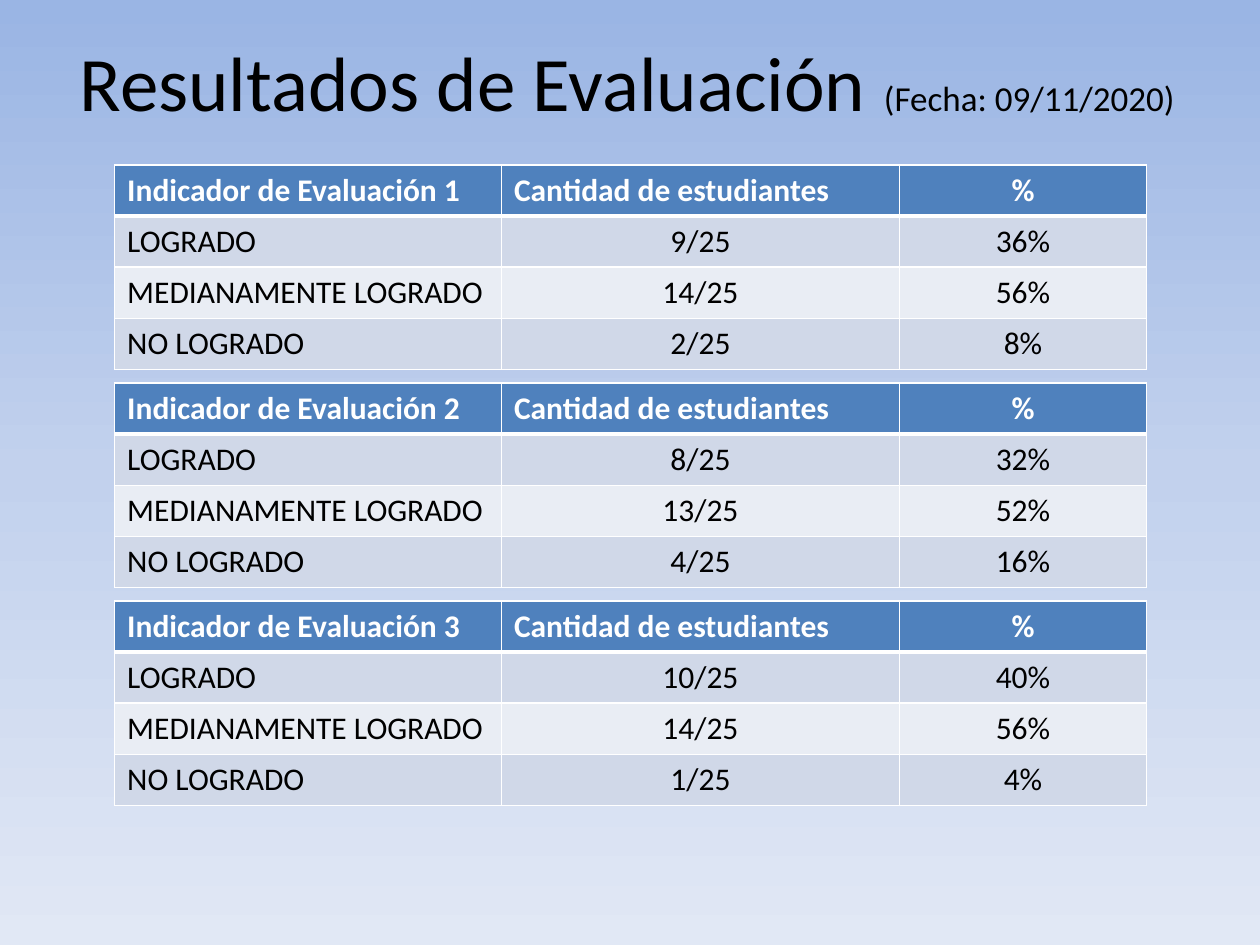
from lxml.etree import SubElement
from pptx import Presentation
from pptx.dml.color import RGBColor
from pptx.enum.text import MSO_ANCHOR, PP_ALIGN
from pptx.oxml.ns import qn
from pptx.util import Inches, Pt

COLORS = {
    "sky_top": "9AB5E4",
    "sky_middle": "C2D1ED",
    "sky_bottom": "E1E8F5",
    "header": "4F81BD",
    "band_dark": "D0D8E8",
    "band_light": "E9EDF4",
    "white": "FFFFFF",
    "black": "000000",
}
TITLE_FORMAT = {"name": "Calibri", "bold": False}
HEADER_FORMAT = {"name": "Calibri", "size": Pt(18), "bold": True}
BODY_FORMAT = {**HEADER_FORMAT, "bold": False}

LEVELS = ["LOGRADO", "MEDIANAMENTE LOGRADO", "NO LOGRADO"]
STUDENTS = 25
COUNTS_BY_INDICATOR = [[9, 14, 2], [8, 13, 4], [10, 14, 1]]
COLUMN_WIDTHS = [3.07, 3.16, 1.96]
TABLE_LEFT, TABLE_TOP, TABLE_PITCH = 0.91, 1.31, 1.73
TABLE_WIDTH, TABLE_HEIGHT = sum(COLUMN_WIDTHS), 1.62


def format_font(font, values, color):
    """Apply a dict of font values and a named colour."""
    for attribute, value in values.items():
        setattr(font, attribute, value)
    font.color.rgb = RGBColor.from_string(COLORS[color])


def paint_background(slide):
    """Fill the slide with a vertical three-stop gradient."""
    fill = slide.background.fill
    fill.gradient()
    fill.gradient_angle = 270
    stops = slide.element.find(".//" + qn("a:gsLst"))
    stops.clear()
    for position, color in [(0, "sky_top"), (50, "sky_middle"), (100, "sky_bottom")]:
        stop = SubElement(stops, qn("a:gs"), pos=str(position * 1000))
        SubElement(stop, qn("a:srgbClr"), val=COLORS[color])


def add_heading(slide, left, top, width, height):
    """Place the title and its smaller date in the title placeholder."""
    heading = slide.shapes.title
    box = {"left": left, "top": top, "width": width, "height": height}
    for attribute, value in box.items():
        setattr(heading, attribute, Inches(value))
    heading.text_frame.vertical_anchor = MSO_ANCHOR.MIDDLE
    paragraph = heading.text_frame.paragraphs[0]
    paragraph.alignment = PP_ALIGN.CENTER
    for wording, size in [("Resultados de Evaluación ", 44), ("(Fecha: 09/11/2020) ", 20)]:
        run = paragraph.add_run()
        run.text = wording
        format_font(run.font, {**TITLE_FORMAT, "size": Pt(size)}, "black")


def add_borders(cell, row):
    """Draw white cell borders, thicker between header and body."""
    widths = {"L": 1, "R": 1, "T": 3 if row == 1 else 1, "B": 3 if row == 0 else 1}
    properties = cell._tc.get_or_add_tcPr()
    for side, width in widths.items():
        border = SubElement(properties, qn(f"a:ln{side}"), w=str(Pt(width)))
        solid = SubElement(border, qn("a:solidFill"))
        SubElement(solid, qn("a:srgbClr"), val=COLORS["white"])


def fill_cell(cell, wording, row, column):
    """Write and style one cell according to its row and column."""
    is_header = row == 0
    add_borders(cell, row)
    cell.fill.solid()
    band = "header" if is_header else "band_dark" if row % 2 else "band_light"
    cell.fill.fore_color.rgb = RGBColor.from_string(COLORS[band])
    paragraph = cell.text_frame.paragraphs[0]
    centered = column == 2 or (column == 1 and not is_header)
    paragraph.alignment = PP_ALIGN.CENTER if centered else PP_ALIGN.LEFT
    run = paragraph.add_run()
    run.text = wording
    values, color = (HEADER_FORMAT, "white") if is_header else (BODY_FORMAT, "black")
    format_font(run.font, values, color)


def add_indicator_table(slide, number, counts, left, top, width, height):
    """Place the results table of one indicator in the given box."""
    rows = [[f"Indicador de Evaluación {number}", "Cantidad de estudiantes", "%"]]
    for level, count in zip(LEVELS, counts):
        rows.append([level, f"{count}/{STUDENTS}", f"{count * 100 // STUDENTS}%"])
    box = [Inches(length) for length in (left, top, width, height)]
    results = slide.shapes.add_table(len(rows), len(COLUMN_WIDTHS), *box).table
    for column, share in zip(results.columns, COLUMN_WIDTHS):
        column.width = Inches(width * share / sum(COLUMN_WIDTHS))
    for row, wordings in enumerate(rows):
        for column, wording in enumerate(wordings):
            fill_cell(results.cell(row, column), wording, row, column)


def main():
    """Build and save the evaluation results slide."""
    presentation = Presentation()
    presentation.slide_width = Inches(10)
    presentation.slide_height = Inches(7.5)
    slide = presentation.slides.add_slide(presentation.slide_layouts[5])
    paint_background(slide)
    add_heading(slide, 0.51, 0.13, 9, 1.02)
    for index, counts in enumerate(COUNTS_BY_INDICATOR):
        top = TABLE_TOP + index * TABLE_PITCH
        add_indicator_table(
            slide, index + 1, counts, TABLE_LEFT, top, TABLE_WIDTH, TABLE_HEIGHT
        )
    presentation.save("out.pptx")


if __name__ == "__main__":
    main()
